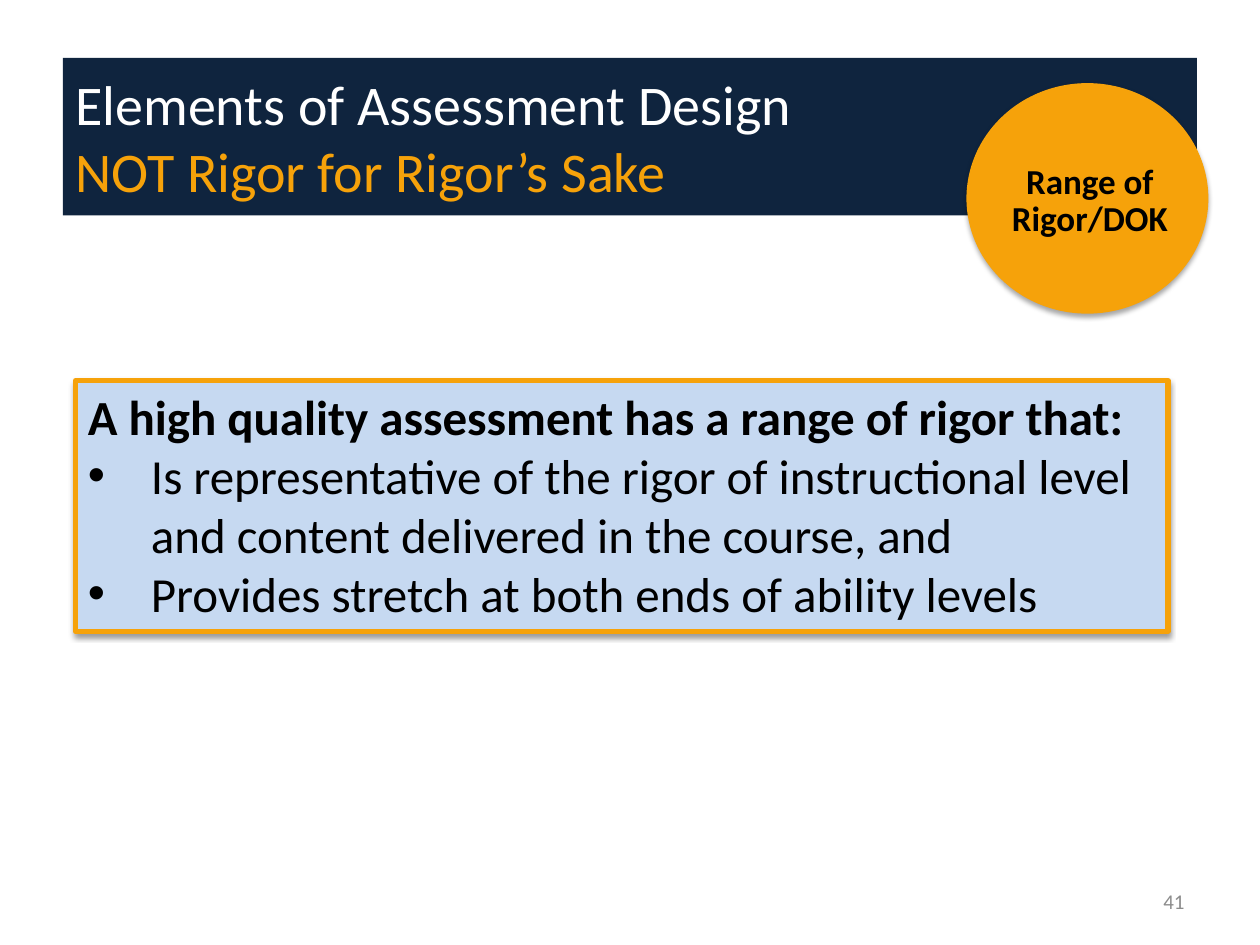
"""Build the slide on range of rigor in assessment design."""
from lxml.etree import SubElement
from pptx import Presentation
from pptx.dml.color import RGBColor
from pptx.enum.shapes import MSO_SHAPE
from pptx.enum.text import MSO_ANCHOR, PP_ALIGN
from pptx.oxml.ns import qn
from pptx.util import Inches, Pt

NAVY = RGBColor(0x0F, 0x24, 0x3E)
ORANGE = RGBColor(0xF6, 0xA2, 0x0A)
PALE_BLUE = RGBColor(0xC6, 0xD9, 0xF1)
WHITE = RGBColor(0xFF, 0xFF, 0xFF)
BLACK = RGBColor(0, 0, 0)
GRAY = RGBColor(0x8C, 0x8C, 0x8C)

TITLE = [
    ("Elements of Assessment Design", WHITE, False),
    ("NOT Rigor for Rigor’s Sake", ORANGE, False),
]
HEADING = ("A high quality assessment has a range of rigor that:", BLACK, True)
BULLETS = [
    ("Is representative of the rigor of instructional level and content "
     "delivered in the course, and", BLACK, False),
    ("Provides stretch at both ends of ability levels", BLACK, False),
]
BADGE = [("Range of Rigor/DOK", BLACK, True)]
PAGE = [("41", GRAY, False)]


def add_shape(shapes, kind, box, fill):
    sp = shapes.add_shape(kind, *map(Inches, box))
    sp.shadow.inherit = False
    sp.fill.solid()
    sp.fill.fore_color.rgb = fill
    sp.line.fill.background()
    return sp


def add_shadow(sp, alpha, distance):
    effects = sp._element.spPr.find(qn("a:effectLst"))
    shadow = SubElement(effects, qn("a:outerShdw"), blurRad=str(Pt(3.1)),
                        dist=str(Pt(distance)), dir="5400000", rotWithShape="0")
    color = SubElement(shadow, qn("a:srgbClr"), val=str(BLACK))
    SubElement(color, qn("a:alpha"), val=str(alpha * 1000))


def write(sp, lines, size, anchor=MSO_ANCHOR.MIDDLE, align=PP_ALIGN.LEFT):
    tf = sp.text_frame
    tf.word_wrap = True
    tf.vertical_anchor = anchor
    tf.text = "\n".join(text for text, _, _ in lines)
    for p, (_, color, bold) in zip(tf.paragraphs, lines):
        p.alignment = align
        font = p.runs[0].font
        font.name, font.size, font.bold = "Calibri", Pt(size), bold
        font.color.rgb = color
    return tf


def indent(p, bullet=None):
    pPr = p._p.get_or_add_pPr()
    pPr.set("marL", str(Inches(0.5)))
    pPr.set("indent", str(-Inches(0.5)))
    if bullet:
        SubElement(SubElement(pPr, qn("a:buClr")), qn("a:srgbClr"), val=str(BLACK))
        SubElement(pPr, qn("a:buFont"), typeface="Arial")
        SubElement(pPr, qn("a:buChar"), char=bullet)


def main():
    prs = Presentation()
    prs.slide_width, prs.slide_height = Inches(10), Inches(7.5)
    s = prs.slides.add_slide(prs.slide_layouts[6])

    panel = add_shape(s.shapes, MSO_SHAPE.RECTANGLE, (0.6, 3.02, 8.67, 1.99), PALE_BLUE)
    panel.line.color.rgb = ORANGE
    panel.line.width = Pt(3)
    add_shadow(panel, 38, 1.6)
    tf = write(panel, [HEADING] + BULLETS, 28, MSO_ANCHOR.TOP)
    for i, p in enumerate(tf.paragraphs):
        indent(p, "•" if i else None)

    banner = add_shape(s.shapes, MSO_SHAPE.RECTANGLE, (0.5, 0.46, 9, 1.25), NAVY)
    write(banner, TITLE, 32)

    badge = s.shapes.add_group_shape()
    circle = add_shape(badge.shapes, MSO_SHAPE.OVAL, (7.67, 0.66, 1.92, 1.83), ORANGE)
    add_shadow(circle, 35, 1.8)
    label = add_shape(badge.shapes, MSO_SHAPE.RECTANGLE, (8, 1.07, 1.3, 1.06), ORANGE)
    tf = write(label, BADGE, 20, align=PP_ALIGN.CENTER)
    tf.margin_left = tf.margin_right = tf.margin_top = tf.margin_bottom = Inches(0.02)
    tf.paragraphs[0].line_spacing = 0.9

    number = s.shapes.add_textbox(*map(Inches, (7.17, 6.95, 2.33, 0.4)))
    write(number, PAGE, 12, align=PP_ALIGN.RIGHT)

    prs.save("out.pptx")


if __name__ == "__main__":
    main()
